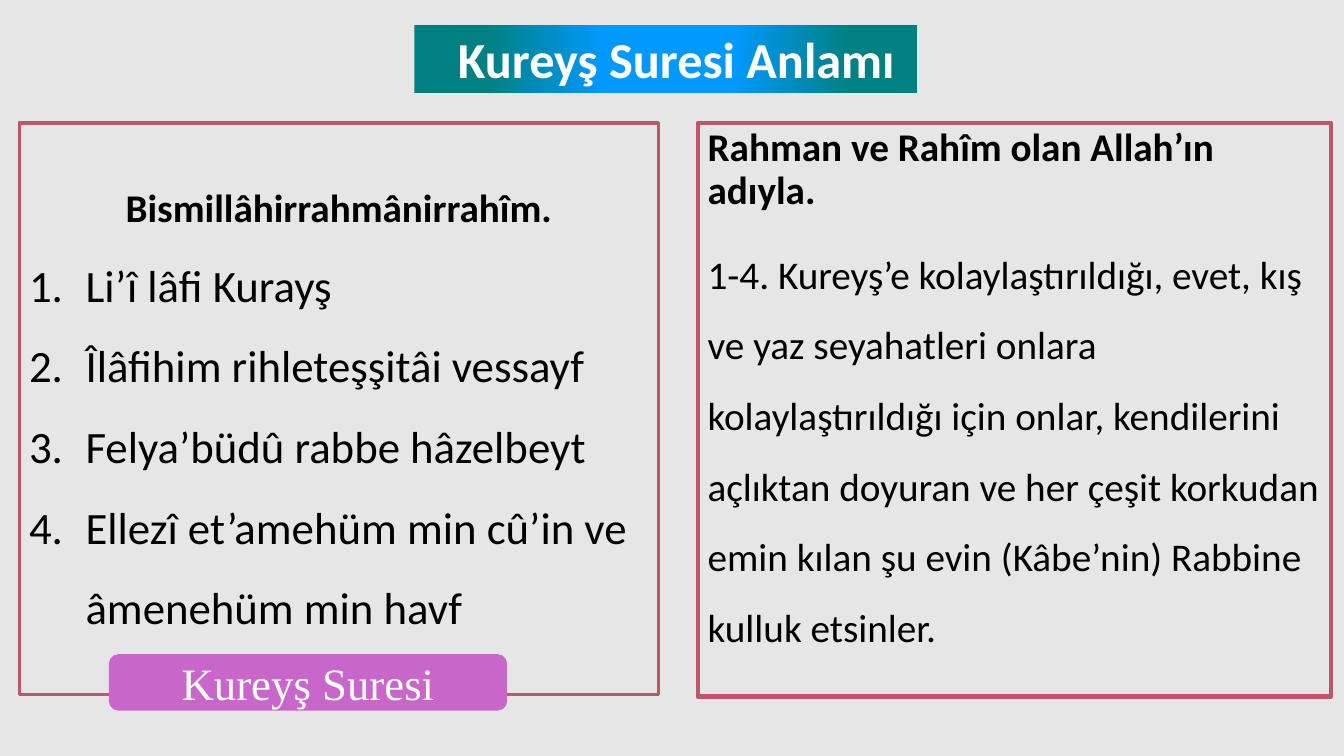
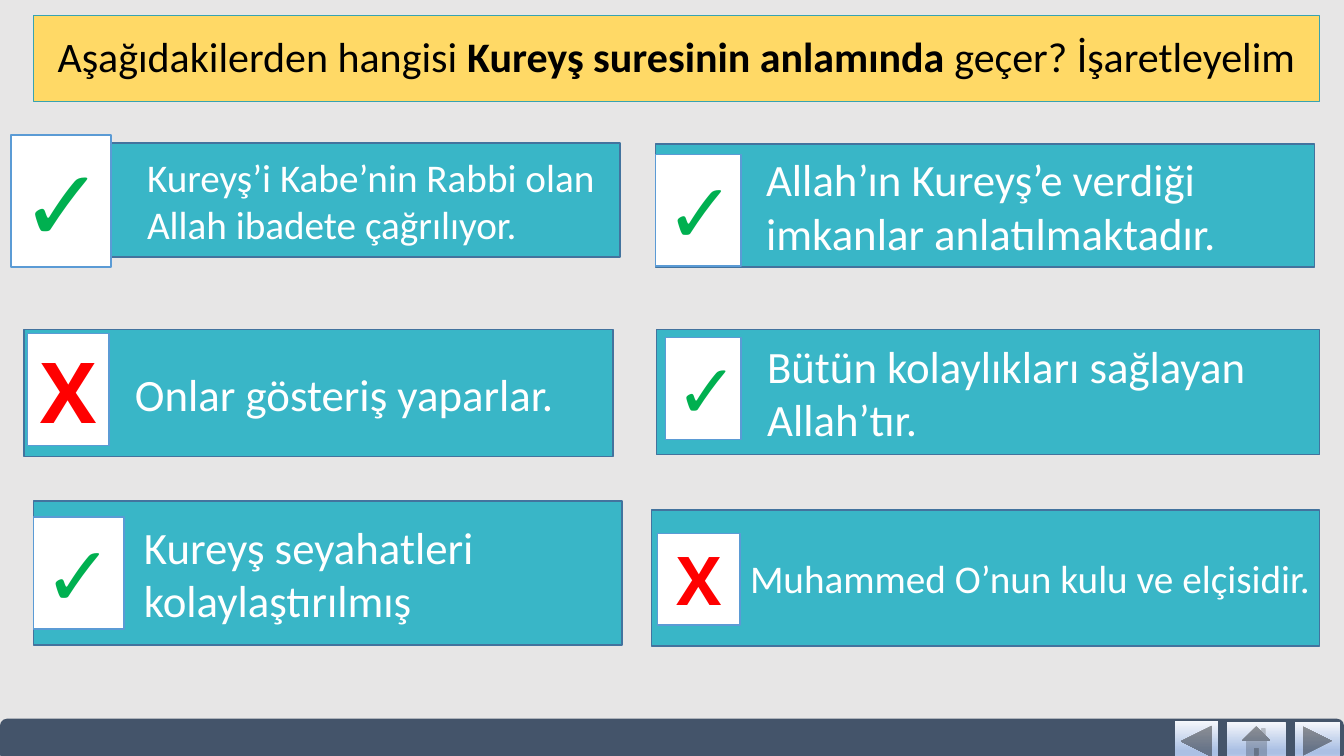
from dataclasses import dataclass

from lxml import etree
from pptx import Presentation
from pptx import util as u
from pptx.dml.color import RGBColor
from pptx.enum import shapes, text
from pptx.oxml.ns import qn

PX = 9144  # 100 px to the inch


@dataclass(frozen=True)
class Theme:
    background: str = "E7E6E6"
    black: str = "000000"
    white: str = "FFFFFF"
    frame: str = "BE5667"
    label: str = "C866CA"
    heading: str = "FFD966"
    heading_line: str = "38A3B1"
    answer: str = "39B6C7"
    answer_line: str = "43739E"
    mark_line: str = "5B9BD5"
    right: str = "00B050"
    wrong: str = "FF0000"
    footer: str = "44546A"
    title_band: tuple = ((0, "008080"), (14, "008080"), (38, "0099FF"),
                         (63, "0099FF"), (87, "008080"), (100, "008080"))
    button: tuple = ((0, "F6F8FC"), (74, "ABC0E4"), (83, "ABC0E4"), (100, "C7D5ED"))
    font: str = "Calibri"
    mark_font: str = "Open Sans"
    alternate_mark_font: str = "Arial"
    label_font: str = "Times New Roman"
    title_size: int = 36
    large: int = 32
    question: int = 30
    medium: int = 28


theme = Theme()
KIND = shapes.MSO_SHAPE
ALIGN = text.PP_ALIGN


def add_box(slide, place, kind=KIND.RECTANGLE, fill=None, angle=0, line=None,
            line_width=1, anchor=text.MSO_ANCHOR.MIDDLE):
    """Add a shape, or a text box if kind is None; fill is a colour or gradient stops."""
    place = [length * PX for length in place]
    if kind is None:
        shape = slide.shapes.add_textbox(*place)
    else:
        shape = slide.shapes.add_shape(kind, *place)
        shape.shadow.inherit = False
    if fill is None:
        shape.fill.background()
    elif isinstance(fill, str):
        shape.fill.solid()
        shape.fill.fore_color.rgb = RGBColor.from_string(fill)
    else:
        shape.fill.gradient()
        shape.fill.gradient_angle = angle
        stops = shape._element.spPr.find(".//" + qn("a:gsLst"))
        stops[:] = []
        for percent, color in fill:
            stop = etree.SubElement(stops, qn("a:gs"), pos=str(percent * 1000))
            etree.SubElement(stop, qn("a:srgbClr"), val=color)
    if line:
        shape.line.color.rgb = RGBColor.from_string(line)
        shape.line.width = u.Pt(line_width)
    else:
        shape.line.fill.background()
    shape.text_frame.word_wrap = True
    shape.text_frame.vertical_anchor = anchor
    return shape


def write(shape, content, size, color=theme.white, font=theme.font, bold=False,
          align=ALIGN.LEFT, indent=0, numbered=False, spacing=None, before=None):
    """Append a paragraph; content is a string or a list of (text, bold) runs."""
    frame = shape.text_frame
    paragraph = frame.add_paragraph() if frame.text else frame.paragraphs[0]
    properties = paragraph._p.get_or_add_pPr()
    if indent:
        properties.set("marL", str(indent * PX))
    if numbered:
        properties.set("indent", str(-indent * PX))
        etree.SubElement(properties, qn("a:buFont"), typeface="+mj-lt")
        etree.SubElement(properties, qn("a:buAutoNum"), type="arabicPeriod")
    paragraph.alignment = align
    if spacing:
        paragraph.line_spacing = spacing
    if before:
        paragraph.space_before = u.Pt(before)
    for words, is_bold in [(content, bold)] if isinstance(content, str) else content:
        run = paragraph.add_run()
        run.text = words
        run.font.size = u.Pt(size)
        run.font.name = font
        run.font.bold = is_bold
        run.font.color.rgb = RGBColor.from_string(color)


presentation = Presentation()
presentation.slide_width = 1333 * PX
presentation.slide_height = 750 * PX
slides = []
for _ in range(2):
    slide = presentation.slides.add_slide(presentation.slide_layouts[6])
    slide.background.fill.solid()
    slide.background.fill.fore_color.rgb = RGBColor.from_string(theme.background)
    slides.append(slide)
meaning_slide, quiz_slide = slides

# The sura and its meaning
meaning = add_box(meaning_slide, (692, 122, 628, 569), line=theme.frame, line_width=3,
                  anchor=text.MSO_ANCHOR.TOP)
write(meaning, "Rahman ve Rahîm olan Allah’ın adıyla.", theme.medium, theme.black,
      bold=True, spacing=0.9)
write(meaning, "1-4. Kureyş’e kolaylaştırıldığı, evet, kış ve yaz seyahatleri onlara "
      "kolaylaştırıldığı için onlar, kendilerini açlıktan doyuran ve her çeşit korkudan "
      "emin kılan şu evin (Kâbe’nin) Rabbine kulluk etsinler.",
      theme.medium, theme.black, spacing=1.5, before=10)

add_box(meaning_slide, (411, 25, 499, 67), fill=theme.title_band)
title = add_box(meaning_slide, (306, 22, 730, 71), kind=None)
write(title, "Kureyş Suresi Anlamı", theme.title_size, bold=True, align=ALIGN.CENTER)

sura = add_box(meaning_slide, (19, 122, 634, 567), line=theme.frame, line_width=2.25)
write(sura, "Bismillâhirrahmânirrahîm.", theme.medium, theme.black, bold=True,
      align=ALIGN.CENTER)
for verse in (
    "Li’î lâfi Kurayş",
    "Îlâfihim rihleteşşitâi vessayf",
    "Felya’büdû rabbe hâzelbeyt",
    "Ellezî et’amehüm min cû’in ve âmenehüm min havf",
):
    write(sura, verse, theme.large, theme.black, indent=56, numbered=True, spacing=1.5)

sura_label = add_box(meaning_slide, (108, 649, 395, 56), KIND.ROUNDED_RECTANGLE, theme.label)
write(sura_label, "Kureyş Suresi", theme.large, font=theme.label_font, align=ALIGN.CENTER)

# The quiz
question = add_box(quiz_slide, (33, 15, 1276, 86), fill=theme.heading,
                   line=theme.heading_line, line_width=0.75)
write(question, [("Aşağıdakilerden hangisi ", False), ("Kureyş suresinin anlamında ", True),
                 ("geçer? İşaretleyelim", False)],
      theme.question, theme.black, align=ALIGN.CENTER, spacing=0.9)

indented = {"indent": 100}
flush_right = {"align": ALIGN.RIGHT}
main_font, other_font = theme.mark_font, theme.alternate_mark_font
for answer, place, size, layout, mark, mark_place, mark_size, mark_font in (
    ("Kureyş’i Kabe’nin Rabbi olan Allah ibadete çağrılıyor.", (36, 142, 579, 113),
     theme.medium, indented, "✓", (11, 134, 99, 131), 72, main_font),
    ("Allah’ın Kureyş’e verdiği imkanlar anlatılmaktadır.", (650, 143, 654, 122),
     theme.large, indented, "✓", (650, 153, 85, 111), 60, other_font),
    ("Onlar gösteriş yaparlar.", (24, 327, 584, 126),
     theme.large, indented, "X", (27, 331, 81, 111), 60, main_font),
    ("Bütün kolaylıkları sağlayan Allah’tır.", (651, 327, 658, 124),
     theme.large, indented, "✓", (660, 335, 75, 101), 54, other_font),
    ("Kureyş seyahatleri kolaylaştırılmış", (33, 497, 584, 143),
     theme.large, indented, "✓", (33, 513, 90, 111), 60, main_font),
    ("Muhammed O’nun kulu ve elçisidir.", (646, 506, 663, 135),
     theme.medium, flush_right, "X", (652, 529, 82, 91), 48, main_font),
):
    answer_box = add_box(quiz_slide, place, fill=theme.answer, line=theme.answer_line)
    write(answer_box, answer, size, **layout)
    mark_box = add_box(quiz_slide, mark_place, fill=theme.white, line=theme.mark_line)
    write(mark_box, mark, mark_size, theme.right if mark == "✓" else theme.wrong,
          mark_font, bold=True, align=ALIGN.CENTER)

add_box(quiz_slide, (0, 713, 1333, 42), KIND.ROUNDED_RECTANGLE, theme.footer)
for kind, place in (
    (KIND.ACTION_BUTTON_BACK_OR_PREVIOUS, (1165, 715, 43, 41)),
    (KIND.ACTION_BUTTON_HOME, (1217, 716, 58, 38)),
    (KIND.ACTION_BUTTON_FORWARD_OR_NEXT, (1284, 716, 45, 38)),
):
    add_box(quiz_slide, place, kind, theme.button, angle=270)

presentation.save("out.pptx")
